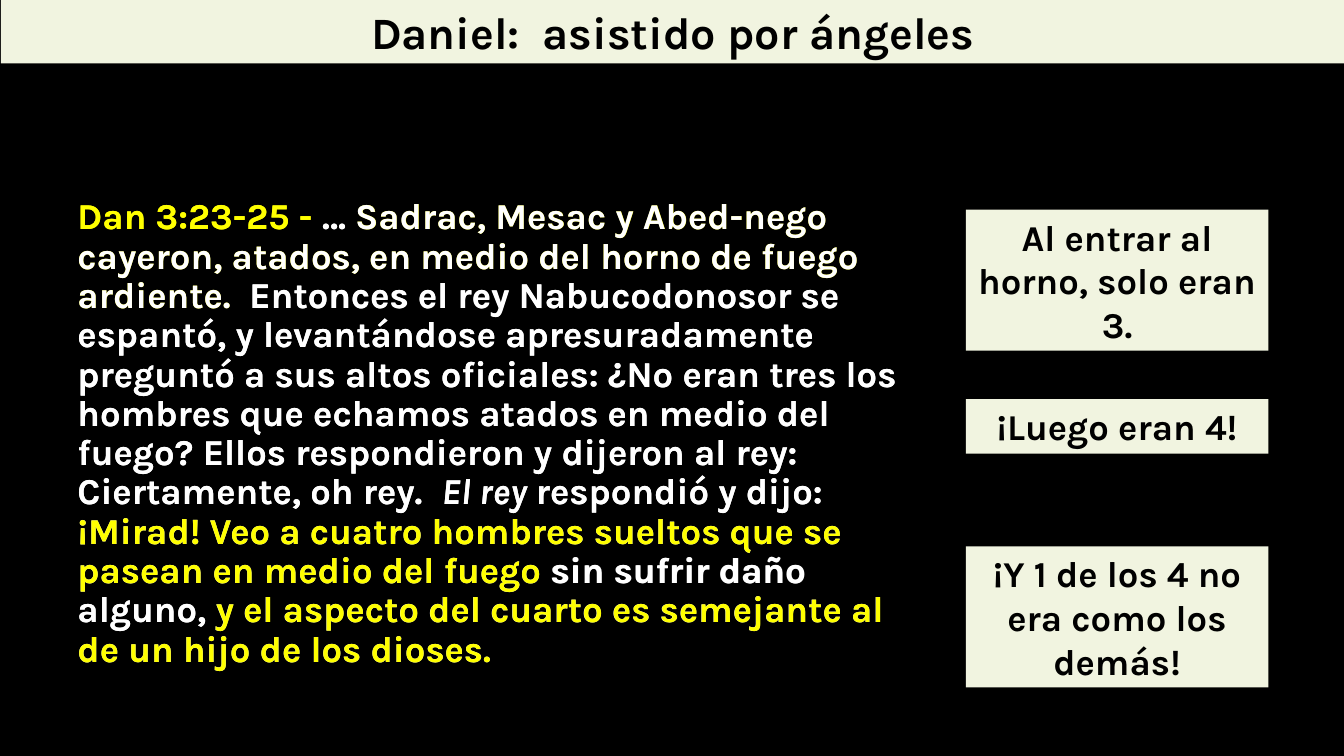
import pptx
import pptx.dml.color
import pptx.enum.shapes
import pptx.enum.text
import pptx.util

Inches = pptx.util.Inches
COLORS = {
    "background": "000000",
    "panel": "F1F4E0",
    "dark": "000000",
    "white": "FFFFFF",
    "yellow": "FFFF00",
}


def color(name):
    return pptx.dml.color.RGBColor.from_string(COLORS[name])


def set_up_text(shape, size):
    """Wrap the text, grow the shape to fit it, and return its paragraph."""
    frame = shape.text_frame
    frame.word_wrap = True
    frame.auto_size = pptx.enum.text.MSO_AUTO_SIZE.SHAPE_TO_FIT_TEXT
    paragraph = frame.paragraphs[0]
    paragraph.font.name = "Karla"
    paragraph.font.size = pptx.util.Pt(size)
    paragraph.font.bold = True
    return paragraph


presentation = pptx.Presentation()
presentation.slide_width = Inches(13.33)
presentation.slide_height = Inches(7.5)
slide = presentation.slides.add_slide(presentation.slide_layouts[6])
slide.background.fill.solid()
slide.background.fill.fore_color.rgb = color("background")

# Bible passage in two layers: text, back colour, front colour, italic
passage = [
    ("Dan 3:23-25 - ", "yellow", "yellow", False),
    ("… ", "white", "white", False),
    ("Sadrac, Mesac y Abed-nego cayeron, atados, en medio del horno de fuego "
     "ardiente.  ", "yellow", "white", False),
    ("Entonces el rey Nabucodonosor se espantó, y levantándose apresuradamente "
     "preguntó a sus altos oficiales: ¿No eran tres los hombres que echamos "
     "atados en medio del fuego? Ellos respondieron y dijeron al rey: "
     "Ciertamente, oh rey.  ", "white", "white", False),
    ("El rey", "white", "white", True),
    (" respondió y dijo: ", "white", "white", False),
    ("¡Mirad! Veo a cuatro hombres sueltos que se pasean en medio del fuego ",
     "white", "yellow", False),
    ("sin sufrir daño alguno, ", "white", "white", False),
    ("y el aspecto del cuarto es semejante al de un hijo de los dioses. ",
     "white", "yellow", False),
]
for layer, width in enumerate([8.58, 8.65]):
    text_box = slide.shapes.add_textbox(
        Inches(0.67), Inches(1.92), Inches(width), Inches(4.83))
    paragraph = set_up_text(text_box, 26)
    paragraph.line_spacing = 0.9
    paragraph.space_before = pptx.util.Pt(10)
    for text, *layer_colors, italic in passage:
        run = paragraph.add_run()
        run.text = text
        run.font.color.rgb = color(layer_colors[layer])
        run.font.italic = italic

# Title bar and side comments: text, left, top, width, height, font size
panels = [
    ("Daniel:  asistido por ángeles", 0.01, 0, 13.33, 0.63, 32),
    ("Al entrar al horno, solo eran 3.", 9.58, 2.08, 3, 1.4, 26),
    ("¡Luego eran 4!", 9.58, 3.96, 3, 0.54, 26),
    ("¡Y 1 de los 4 no era como los demás!", 9.58, 5.42, 3, 1.4, 26),
]
for text, left, top, width, height, size in panels:
    panel = slide.shapes.add_shape(
        pptx.enum.shapes.MSO_SHAPE.RECTANGLE,
        Inches(left), Inches(top), Inches(width), Inches(height))
    panel.shadow.inherit = False
    panel.fill.solid()
    panel.fill.fore_color.rgb = color("panel")
    panel.line.fill.background()
    paragraph = set_up_text(panel, size)
    paragraph.alignment = pptx.enum.text.PP_ALIGN.CENTER
    paragraph.font.color.rgb = color("dark")
    paragraph.add_run().text = text

presentation.save("out.pptx")
